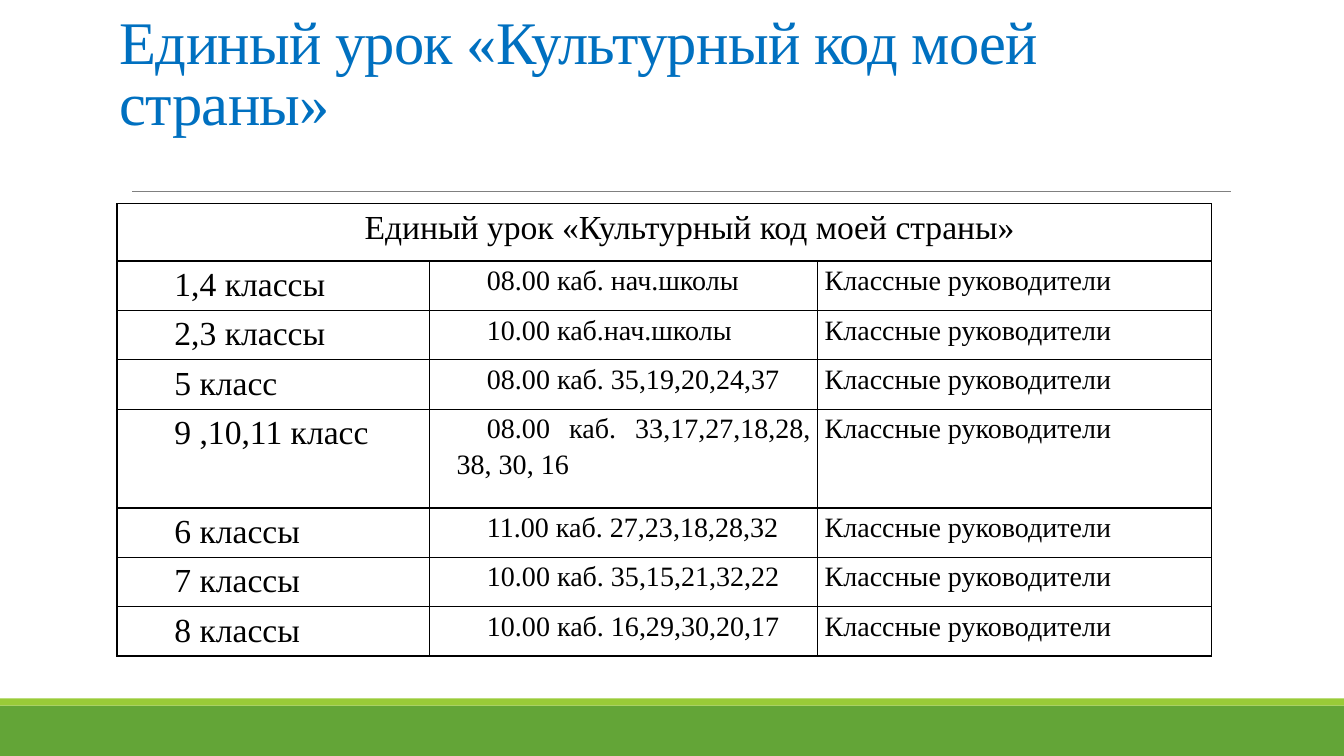
from lxml.etree import SubElement
from pptx import Presentation
from pptx.dml.color import RGBColor
from pptx.enum.shapes import MSO_CONNECTOR, MSO_SHAPE
from pptx.enum.text import MSO_ANCHOR, PP_ALIGN
from pptx.oxml.ns import qn
from pptx.util import Inches, Pt

BLACK = RGBColor(0x00, 0x00, 0x00)
BLUE = RGBColor(0x00, 0x70, 0xC0)
GREEN = RGBColor(0x63, 0xA5, 0x37)
LIME = RGBColor(0x99, 0xCB, 0x38)
GRAY = RGBColor(0x80, 0x80, 0x80)
FONT = "Times New Roman"

LESSON = "Единый урок «Культурный код моей страны»"
TEACHERS = "Классные руководители"
SCHEDULE = [
    ("1,4 классы", "08.00 каб. нач.школы"),
    ("2,3 классы", "10.00 каб.нач.школы"),
    ("5 класс", "08.00 каб. 35,19,20,24,37"),
    ("9 ,10,11 класс", "08.00 каб. 33,17,27,18,28, 38, 30, 16"),
    ("6 классы", "11.00 каб. 27,23,18,28,32"),
    ("7 классы", "10.00 каб. 35,15,21,32,22"),
    ("8 классы", "10.00 каб. 16,29,30,20,17"),
]
COLUMN_WIDTHS = [3.1, 3.85, 3.91]
ROW_HEIGHTS = [0.57, 0.49, 0.49, 0.49, 0.98, 0.49, 0.49, 0.49]


def style_run(run, size, color):
    """Set the font, size and colour of a run."""
    run.font.name = FONT
    run.font.size = Pt(size)
    run.font.color.rgb = color


def add_band(slide, top, height, color):
    """Add a full-width coloured band."""
    band = slide.shapes.add_shape(
        MSO_SHAPE.RECTANGLE, 0, Inches(top), Inches(13.33), Inches(height))
    band.shadow.inherit = False
    band.fill.solid()
    band.fill.fore_color.rgb = color
    band.line.fill.background()


def add_divider(slide):
    """Add the thin rule below the title."""
    divider = slide.shapes.add_connector(
        MSO_CONNECTOR.STRAIGHT, Inches(1.31), Inches(1.9), Inches(12.21), Inches(1.9))
    divider.line.color.rgb = GRAY
    divider.line.width = Pt(0.5)
    SubElement(divider._element.spPr, qn("a:effectLst"))


def add_title(slide):
    """Add the slide title."""
    title = slide.shapes.add_textbox(Inches(1.09), Inches(0.54), Inches(11), Inches(1.59))
    frame = title.text_frame
    frame.word_wrap = True
    frame.vertical_anchor = MSO_ANCHOR.BOTTOM
    frame.margin_bottom = Inches(0.76)
    frame.text = LESSON
    heading = frame.paragraphs[0]
    heading.line_spacing = 0.85
    style_run(heading.runs[0], 43.2, BLUE)
    heading.runs[0].font._element.set("spc", "-50")


def add_borders(cell):
    """Draw a thin black border on every side of a cell."""
    properties = cell._tc.get_or_add_tcPr()
    for position, side in enumerate(("a:lnL", "a:lnR", "a:lnT", "a:lnB")):
        border = SubElement(properties, qn(side), w=str(Pt(1)))
        fill = SubElement(border, qn("a:solidFill"))
        SubElement(fill, qn("a:srgbClr"), val=str(BLACK))
        properties.insert(position, border)


def fill_cell(cell, text, size, alignment, indented=True):
    """Write and format the text of a cell."""
    cell.margin_left = cell.margin_right = Inches(0.07)
    cell.margin_top = cell.margin_bottom = 0
    cell.text = text
    entry = cell.text_frame.paragraphs[0]
    entry.alignment = alignment
    entry.line_spacing = 1.15
    if indented:
        indents = entry._p.get_or_add_pPr()
        indents.set("marL", str(Inches(0.2)))
        indents.set("indent", str(Inches(0.3)))
    style_run(entry.runs[0], size, BLACK)


def add_schedule(slide):
    """Add the table of classes, times, rooms and teachers."""
    schedule = slide.shapes.add_table(
        len(ROW_HEIGHTS), len(COLUMN_WIDTHS),
        Inches(1.16), Inches(2.02), Inches(10.86), Inches(4.48)).table
    schedule.first_row = schedule.horz_banding = False
    for column, width in zip(schedule.columns, COLUMN_WIDTHS):
        column.width = Inches(width)
    for row, height in zip(schedule.rows, ROW_HEIGHTS):
        row.height = Inches(height)
    for cell in schedule.iter_cells():
        cell.fill.background()
        add_borders(cell)
    schedule.cell(0, 0).merge(schedule.cell(0, 2))
    fill_cell(schedule.cell(0, 0), LESSON, 24, PP_ALIGN.CENTER)
    for index, (classes, rooms) in enumerate(SCHEDULE, start=1):
        fill_cell(schedule.cell(index, 0), classes, 24, PP_ALIGN.JUSTIFY)
        fill_cell(schedule.cell(index, 1), rooms, 20, PP_ALIGN.JUSTIFY)
        fill_cell(schedule.cell(index, 2), TEACHERS, 20, PP_ALIGN.LEFT, indented=False)


def main():
    """Build the slide and save it."""
    presentation = Presentation()
    presentation.slide_width = Inches(13.33)
    presentation.slide_height = Inches(7.5)
    slide = presentation.slides.add_slide(presentation.slide_layouts[6])
    add_band(slide, 7, 0.5, GREEN)
    add_band(slide, 6.93, 0.07, LIME)
    add_divider(slide)
    add_title(slide)
    add_schedule(slide)
    presentation.save("out.pptx")


if __name__ == "__main__":
    main()
